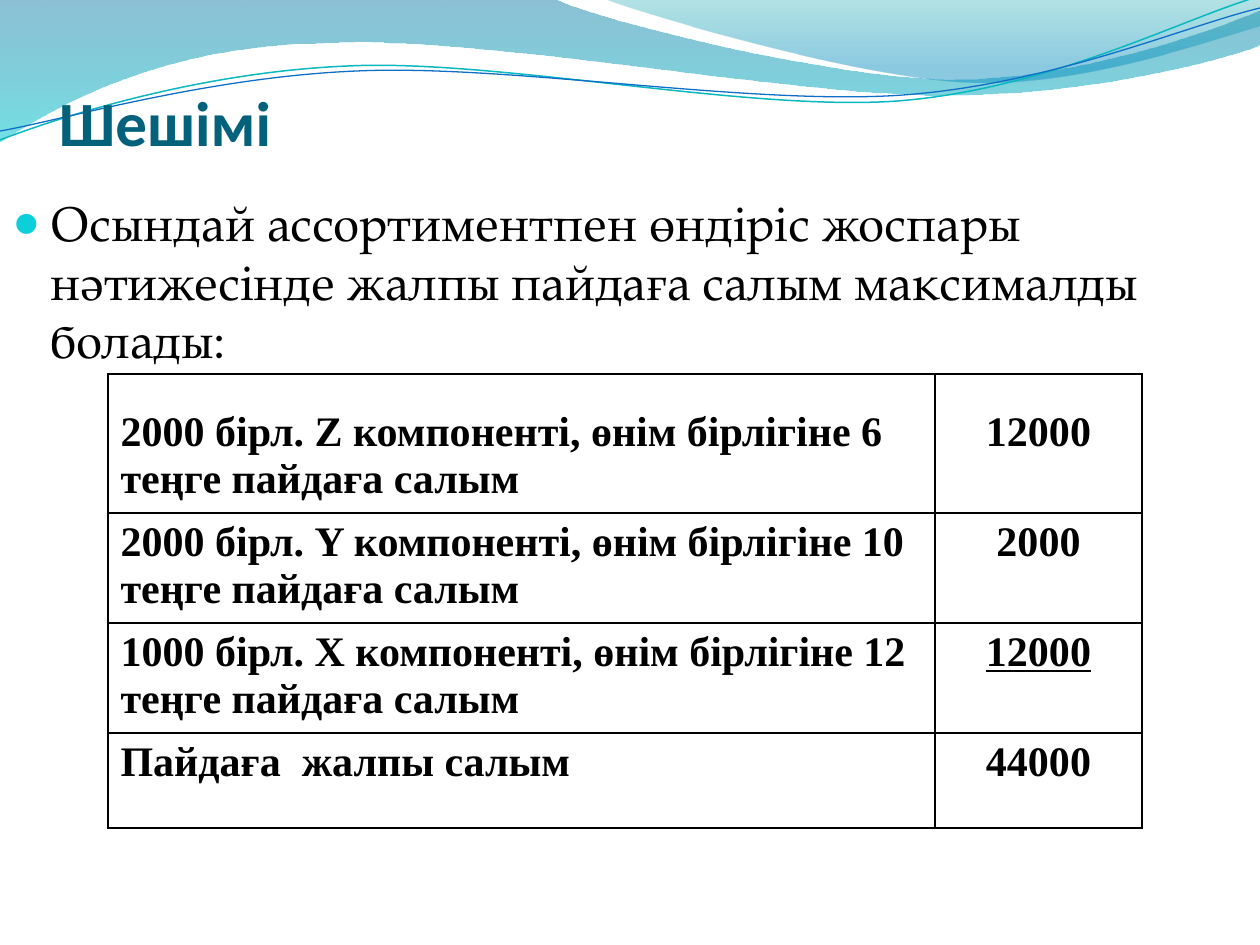
import math

import pptx
import pptx.util
import pptx.dml.color
import pptx.enum.text
import pptx.oxml.ns
from lxml import etree

SLIDE = (1260, 945)
PX = 914400 / 126

THEME = {
    "title": ("Calibri", 36, "04617B"),
    "body": ("TeX Gyre Pagella", 28, "000000"),
    "table": ("Times New Roman", 24, "000000"),
    "bullet": "0BD0D9",
    "border": "000000",
    "border_width": 1,
    "spacer_size": 6,
    "body_space": 6,
}

TITLE = "Шешімі"
BODY = ("Осындай ассортиментпен өндіріс жоспары нәтижесінде "
        "жалпы пайдаға салым максималды болады:")
CONTRIBUTIONS = [
    ("", ""),
    ("2000 бірл. Z компоненті, өнім бірлігіне 6 теңге пайдаға салым", "12000"),
    ("2000 бірл. Y компоненті, өнім бірлігіне 10 теңге пайдаға салым", "2000"),
    ("1000 бірл. X компоненті, өнім бірлігіне 12 теңге пайдаға салым", "12000"),
    ("Пайдаға  жалпы салым", "44000"),
]
UNDERLINED_ROW = 3

TITLE_BOX = (59, 49, 1134, 110)
BODY_BOX = (0, 186, 1197, 684)
TABLE_AT = (108, 374)
COLUMNS = (827, 207)
ROWS = (29, 110, 110, 110, 95)
CELL_BOTTOM = 2
HANGING = 38

RIBBON_TILT = -2.7
RIBBON_CENTRE = (629, 72)
WAVES = [
    {"outline": [(0, 0), (554, -1),
                 (600, 21, 837, 79, 955, 79), (1075, 79, 1207, 33, 1260, 11),
                 (1261, 45),
                 (1239, 55, 1096, 96, 940, 95), (783, 95, 481, 35, 324, 43),
                 (163, 45, 58, 105, -1, 142)],
     "gradient": [(0, "0074A1", 45), (1, "00C6CF", 55)]},
    {"outline": [(604, -1),
                 (641, 14, 859, 78, 969, 82), (1079, 87, 1211, 40, 1260, 26),
                 (1260, 0)],
     "gradient": [(0, "00A1A9", 30), (0.8, "008BBF", 45)]},
    {"outline": [(0, 140),
                 (60, 117, 199, 72, 349, 66), (498, 59, 747, 112, 898, 101),
                 (1050, 89, 1182, 19, 1257, -3)],
     "stroke": ("0AB8BF", 0.85)},
    {"outline": [(0, 131),
                 (59, 121, 207, 77, 357, 71), (508, 64, 752, 106, 903, 95),
                 (1053, 84, 1185, 26, 1260, 8)],
     "stroke": ("0F6FC6", 0.75)},
]


def emu(length):
    return pptx.util.Emu(round(length * PX))


def rgb(value):
    return pptx.dml.color.RGBColor.from_string(value)


def add_element(parent, tag, **attributes):
    return etree.SubElement(parent, pptx.oxml.ns.qn(tag), attributes)


def place(part, box):
    part.left, part.top, part.width, part.height = map(emu, box)


def add_text(paragraph, text, style, bold=False, underline=False):
    name, size, color = THEME[style]
    run = paragraph.add_run()
    run.text = text
    run.font.name = name
    run.font.size = pptx.util.Pt(size)
    run.font.color.rgb = rgb(color)
    run.font.bold = bold
    run.font.underline = underline


def turned(x, y, degrees):
    angle = math.radians(degrees)
    dx, dy = x - RIBBON_CENTRE[0], y - RIBBON_CENTRE[1]
    return (emu(RIBBON_CENTRE[0] + dx * math.cos(angle) - dy * math.sin(angle)),
            emu(RIBBON_CENTRE[1] + dx * math.sin(angle) + dy * math.cos(angle)))


def add_wave(slide, outline, gradient=None, stroke=None):
    tilt = RIBBON_TILT if stroke else 0
    segments = [[turned(*segment[i:i + 2], -tilt) for i in range(0, len(segment), 2)]
                for segment in outline]
    anchors = [segment[-1] for segment in segments]
    builder = slide.shapes.build_freeform(*anchors[0])
    builder.add_line_segments(anchors[1:], close=gradient is not None)
    wave = builder.convert_to_shape()
    straights = list(wave.element.iter(pptx.oxml.ns.qn("a:lnTo")))
    for straight, segment in zip(straights, segments[1:]):
        if len(segment) == 3:
            curve = etree.Element(pptx.oxml.ns.qn("a:cubicBezTo"))
            for x, y in segment:
                add_element(curve, "a:pt", x=str(x - wave.left), y=str(y - wave.top))
            straight.getparent().replace(straight, curve)
    wave.rotation = tilt
    wave.shadow.inherit = False
    if stroke:
        wave.fill.background()
        wave.line.color.rgb = rgb(stroke[0])
        wave.line.width = pptx.util.Pt(stroke[1])
        return
    wave.line.fill.background()
    wave.fill.gradient()
    wave.fill.gradient_angle = 270
    for stop, (position, color, _) in zip(wave.fill.gradient_stops, gradient):
        stop.position = position
        stop.color.rgb = rgb(color)
    for tint, (_, _, opacity) in zip(
            wave.element.spPr.iter(pptx.oxml.ns.qn("a:srgbClr")), gradient):
        add_element(tint, "a:alpha", val=str(opacity * 1000))


def add_title(slide):
    title = slide.shapes.title
    title.element.getparent().append(title.element)
    place(title, TITLE_BOX)
    frame = title.text_frame
    frame.margin_left = frame.margin_right = frame.margin_bottom = 0
    frame.vertical_anchor = pptx.enum.text.MSO_ANCHOR.BOTTOM
    frame.paragraphs[0].alignment = pptx.enum.text.PP_ALIGN.LEFT
    add_text(frame.paragraphs[0], TITLE, "title", bold=True)


def add_body(slide):
    frame = slide.shapes.add_textbox(*map(emu, BODY_BOX)).text_frame
    frame.word_wrap = True
    paragraph = frame.paragraphs[0]
    paragraph.space_before = pptx.util.Pt(THEME["body_space"])
    add_text(paragraph, BODY, "body")
    properties = paragraph._p.get_or_add_pPr()
    properties.set("marL", str(emu(HANGING)))
    properties.set("indent", str(-emu(HANGING)))
    add_element(add_element(properties, "a:buClr"), "a:srgbClr", val=THEME["bullet"])
    add_element(properties, "a:buSzPct", val="95000")
    add_element(properties, "a:buFont", typeface="Arial")
    add_element(properties, "a:buChar", char="●")


def set_borders(cell, hidden):
    properties = cell._tc.get_or_add_tcPr()
    for side in "LRTB":
        line = add_element(properties, "a:ln" + side,
                           w=str(pptx.util.Pt(THEME["border_width"])))
        if side == hidden:
            add_element(line, "a:noFill")
        else:
            add_element(add_element(line, "a:solidFill"), "a:srgbClr", val=THEME["border"])


def add_contributions(slide):
    box = (*TABLE_AT, sum(COLUMNS), sum(ROWS))
    table = slide.shapes.add_table(len(ROWS), len(COLUMNS), *map(emu, box)).table
    table.first_row = table.horz_banding = False
    for column, width in zip(table.columns, COLUMNS):
        column.width = emu(width)
    for row, height in zip(table.rows, ROWS):
        row.height = emu(height)
    for r, texts in enumerate(CONTRIBUTIONS):
        for c, text in enumerate(texts):
            cell = table.cell(r, c)
            set_borders(cell, {0: "B", 1: "T"}.get(r))
            cell.fill.background()
            cell.margin_bottom = emu(CELL_BOTTOM)
            paragraph = cell.text_frame.paragraphs[0]
            if not text:
                add_element(paragraph._p, "a:endParaRPr", sz=str(THEME["spacer_size"] * 100))
                continue
            if c == 1:
                paragraph.alignment = pptx.enum.text.PP_ALIGN.CENTER
            add_text(paragraph, text, "table", bold=True,
                     underline=c == 1 and r == UNDERLINED_ROW)


def main():
    deck = pptx.Presentation()
    deck.slide_width, deck.slide_height = map(emu, SLIDE)
    slide = deck.slides.add_slide(deck.slide_layouts.get_by_name("Title Only"))
    for wave in WAVES:
        add_wave(slide, **wave)
    add_title(slide)
    add_body(slide)
    add_contributions(slide)
    deck.save("out.pptx")


if __name__ == "__main__":
    main()
